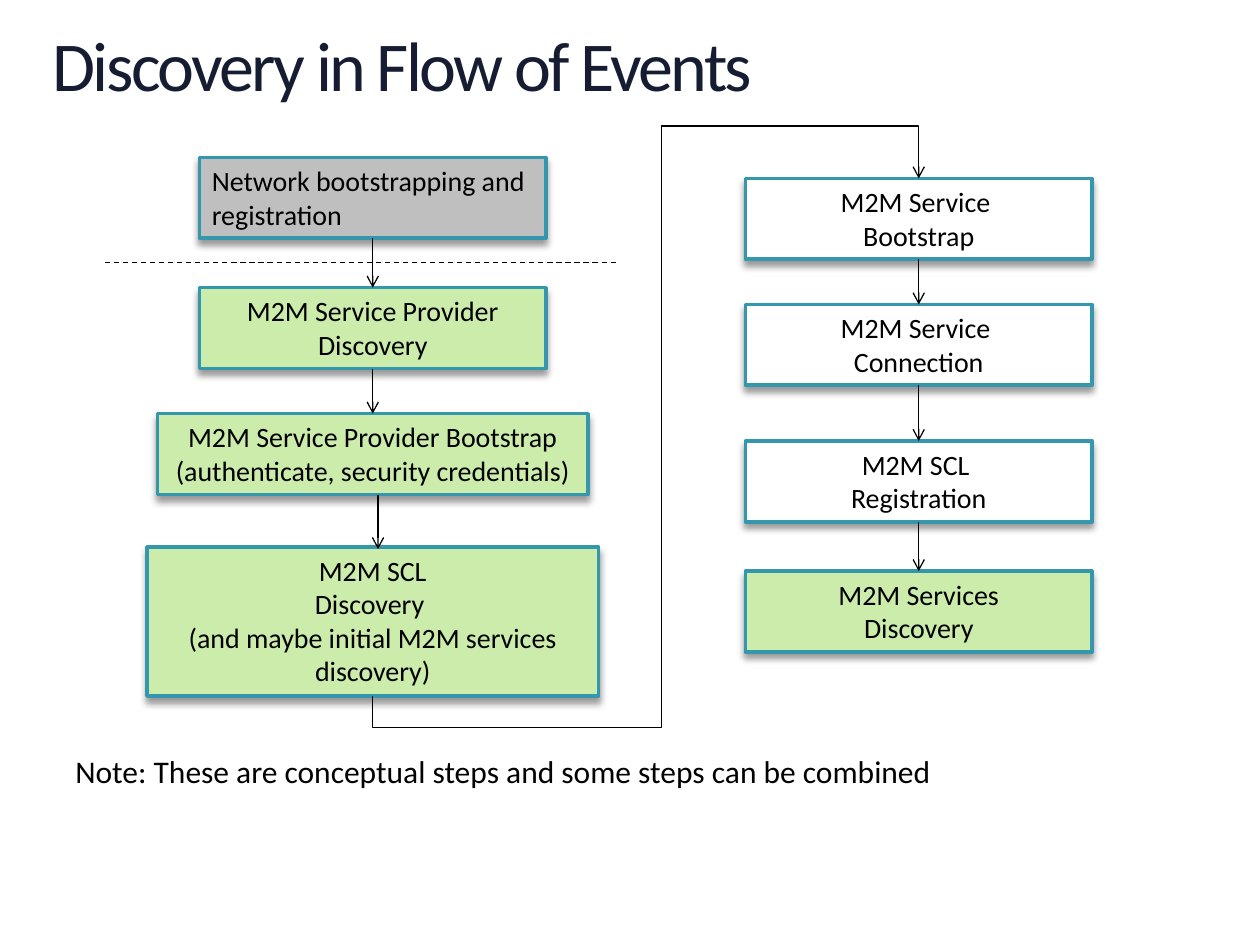
from dataclasses import dataclass

from lxml import etree
from pptx import Presentation
from pptx.dml.color import RGBColor
from pptx.enum.dml import MSO_LINE
from pptx.enum.shapes import MSO_CONNECTOR, MSO_SHAPE
from pptx.enum.text import MSO_ANCHOR, MSO_AUTO_SIZE, PP_ALIGN
from pptx.oxml import parse_xml
from pptx.oxml.ns import nsdecls, qn
from pptx.shapes.autoshape import Shape
from pptx.shapes.connector import Connector
from pptx.slide import Slide
from pptx.util import Emu, Pt

STRAIGHT, ELBOW = MSO_CONNECTOR.STRAIGHT, MSO_CONNECTOR.ELBOW
RECTANGLE = MSO_SHAPE.RECTANGLE
DASH = MSO_LINE.DASH
TOP = MSO_ANCHOR.TOP
GROW = MSO_AUTO_SIZE.SHAPE_TO_FIT_TEXT
LEFT, CENTER = PP_ALIGN.LEFT, PP_ALIGN.CENTER

BLACK = RGBColor(0x00, 0x00, 0x00)
WHITE = RGBColor(0xFF, 0xFF, 0xFF)
GRAY = RGBColor(0xBF, 0xBF, 0xBF)
GREEN = RGBColor(0xCB, 0xEC, 0xAA)
TEAL = RGBColor(0x34, 0x97, 0xAE)
TITLE_STOPS = (
    (0, RGBColor(0x2E, 0x59, 0xB0)),
    (49, RGBColor(0x16, 0x1D, 0x32)),
    (100, BLACK),
)

FONT = "Calibri"
EMU_PER_PX = 7620
SIDE_TOP, SIDE_BOTTOM = 0, 2
LEFT_AXIS, RIGHT_AXIS = 355, 875
STEP_WIDTH, STEP_HEIGHT = 330, 77
RISER_X, RISER_TOP = 630, 120


@dataclass(frozen=True)
class Step:
    lines: tuple[str, ...]
    axis: int
    top: int
    width: int = STEP_WIDTH
    height: int = STEP_HEIGHT
    fill: RGBColor = WHITE
    align: PP_ALIGN = CENTER


DISCOVERY_STEPS = (
    Step(("Network bootstrapping and registration",), LEFT_AXIS, 150,
         fill=GRAY, align=LEFT),
    Step(("M2M Service Provider Discovery",), LEFT_AXIS, 274, fill=GREEN),
    Step(("M2M Service Provider Bootstrap (authenticate, security credentials)",),
         LEFT_AXIS, 394, width=410, fill=GREEN),
    Step(("M2M SCL", "Discovery ", "(and maybe initial M2M services discovery)"),
         LEFT_AXIS, 521, width=430, height=142, fill=GREEN),
)
SERVICE_STEPS = (
    Step(("M2M Service ", "Bootstrap"), RIGHT_AXIS, 170),
    Step(("M2M Service ", "Connection"), RIGHT_AXIS, 290),
    Step(("M2M SCL ", "Registration"), RIGHT_AXIS, 420),
    Step(("M2M Services", "Discovery"), RIGHT_AXIS, 544, fill=GREEN),
)


def px(length: int) -> Emu:
    return Emu(length * EMU_PER_PX)


def write_lines(shape: Shape, lines: tuple[str, ...], size: int,
                align: PP_ALIGN) -> None:
    frame = shape.text_frame
    frame.word_wrap = True
    frame.auto_size = GROW
    frame.vertical_anchor = TOP
    for index, line in enumerate(lines):
        paragraph = frame.add_paragraph() if index else frame.paragraphs[0]
        paragraph.alignment = align
        run = paragraph.add_run()
        run.text = line
        run.font.name = FONT
        run.font.size = Pt(size)
        run.font.color.rgb = BLACK


def add_title(slide: Slide, text: str) -> None:
    title = slide.shapes.title
    title.left, title.top, title.width, title.height = map(px, (50, 30, 1100, 73))
    write_lines(title, (text,), 40, LEFT)
    frame = title.text_frame
    frame.margin_left = frame.margin_right = 0
    frame.margin_top = frame.margin_bottom = 0
    paragraph = frame.paragraphs[0]
    paragraph.line_spacing = 0.9
    properties = paragraph.runs[0].font._element
    properties.set("spc", "-150")
    stops = "".join(
        f'<a:gs pos="{percent * 1000}"><a:srgbClr val="{color}"/></a:gs>'
        for percent, color in TITLE_STOPS
    )
    gradient = parse_xml(
        f'<a:gradFill {nsdecls("a")}><a:gsLst>{stops}</a:gsLst>'
        '<a:lin ang="5400000" scaled="0"/></a:gradFill>'
    )
    properties.replace(properties.find(qn("a:solidFill")), gradient)


def add_step(slide: Slide, step: Step) -> Shape:
    box = slide.shapes.add_shape(
        RECTANGLE, px(step.axis - step.width // 2), px(step.top),
        px(step.width), px(step.height),
    )
    box.fill.solid()
    box.fill.fore_color.rgb = step.fill
    box.line.color.rgb = TEAL
    box.line.width = Pt(2)
    box.shadow.inherit = False
    box._element.spPr.find(qn("a:effectLst")).append(parse_xml(
        f'<a:outerShdw {nsdecls("a")} blurRad="{Pt(4)}" dist="{Pt(3)}" '
        'dir="5400000" rotWithShape="0"><a:srgbClr val="000000">'
        '<a:alpha val="40000"/></a:srgbClr></a:outerShdw>'
    ))
    write_lines(box, step.lines, 16, step.align)
    return box


def add_line(slide: Slide, start: tuple[int, int], end: tuple[int, int],
             kind: MSO_CONNECTOR = STRAIGHT, arrow: bool = False) -> Connector:
    line = slide.shapes.add_connector(kind, *map(px, start + end))
    line.line.color.rgb = BLACK
    line.line.width = Pt(0.75)
    properties = line._element.spPr
    if arrow:
        etree.SubElement(properties.find(qn("a:ln")), qn("a:tailEnd"), type="arrow")
    etree.SubElement(properties, qn("a:effectLst"))
    return line


def join_steps(slide: Slide, steps: tuple[Step, ...], boxes: list[Shape]) -> None:
    for index in range(len(steps) - 1):
        upper, lower = steps[index], steps[index + 1]
        arrow = add_line(slide, (upper.axis, upper.top + upper.height),
                         (lower.axis, lower.top), arrow=True)
        arrow.begin_connect(boxes[index], SIDE_BOTTOM)
        arrow.end_connect(boxes[index + 1], SIDE_TOP)


def add_return_path(slide: Slide, last: Step, first: Step) -> None:
    bottom = last.top + last.height
    rise, run = bottom - RISER_TOP, RISER_X - last.axis
    left = (last.axis + RISER_X - rise) // 2
    top = (bottom + RISER_TOP - run) // 2
    riser = add_line(slide, (left + rise, top + run), (left, top), ELBOW)
    properties = riser._element.spPr
    properties.find(qn("a:xfrm")).set("rot", "5400000")
    guides = properties.find(qn("a:prstGeom")).get_or_add_avLst()
    etree.SubElement(guides, qn("a:gd"), name="adj1", fmla="val -5500")

    drop = add_line(slide, (RISER_X, RISER_TOP), (first.axis, first.top),
                    ELBOW, arrow=True)
    drop._element.spPr.find(qn("a:prstGeom")).set("prst", "bentConnector2")


def main() -> None:
    presentation = Presentation()
    presentation.slide_width, presentation.slide_height = px(1200), px(900)
    slide = presentation.slides.add_slide(presentation.slide_layouts[5])
    add_title(slide, "Discovery in Flow of Events")

    discovery_boxes = [add_step(slide, step) for step in DISCOVERY_STEPS]
    service_boxes = [add_step(slide, step) for step in SERVICE_STEPS]
    network_boundary = add_line(slide, (100, 250), (590, 250))
    network_boundary.line.dash_style = DASH
    join_steps(slide, DISCOVERY_STEPS[:3], discovery_boxes)
    add_line(slide, (360, 471), (360, 523), arrow=True)
    join_steps(slide, SERVICE_STEPS, service_boxes)
    add_return_path(slide, DISCOVERY_STEPS[-1], SERVICE_STEPS[0])

    note = slide.shapes.add_textbox(*map(px, (60, 710, 1070, 48)))
    write_lines(
        note, ("Note: These are conceptual steps and some steps can be combined",),
        18, LEFT,
    )
    presentation.save("out.pptx")


if __name__ == "__main__":
    main()
